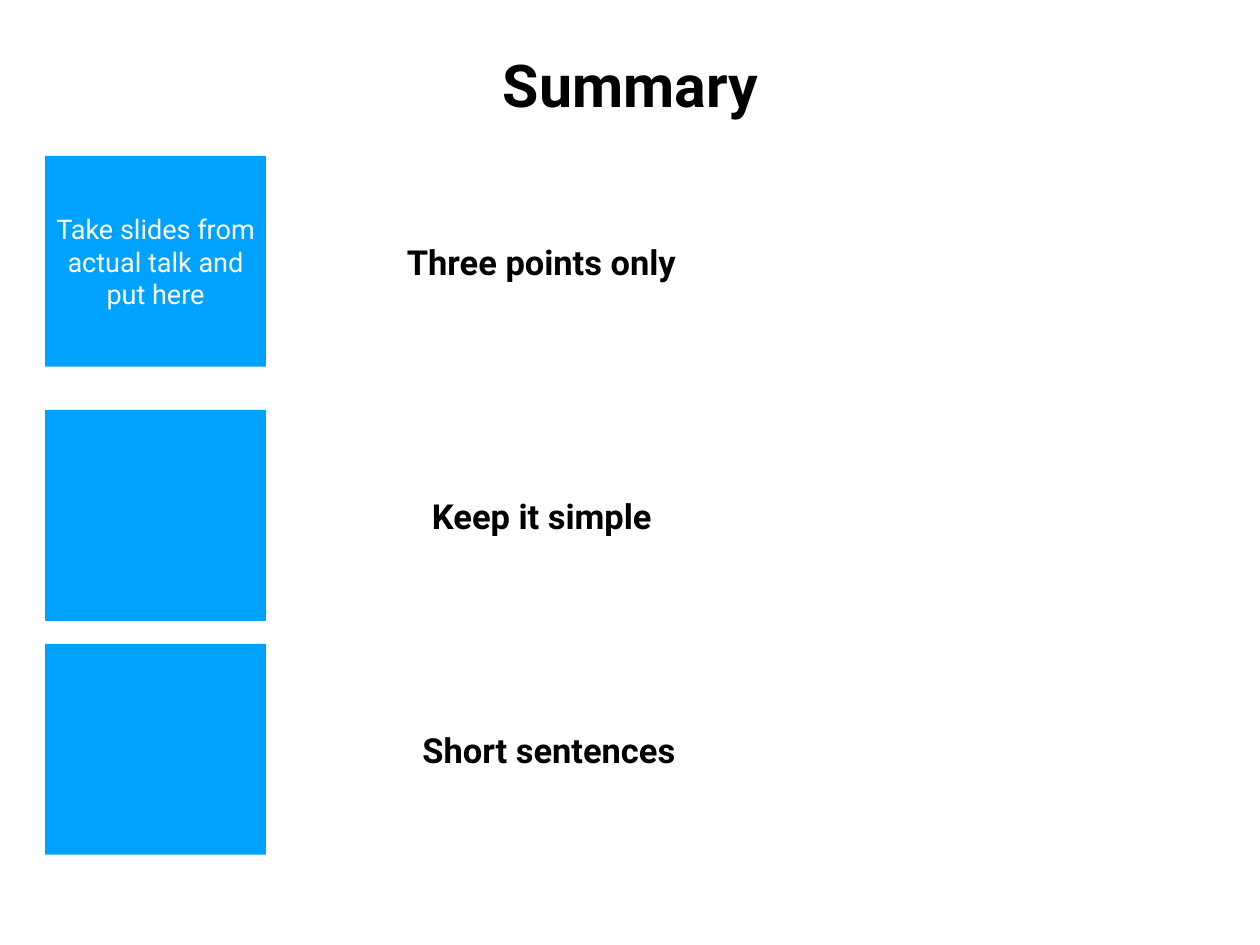
"""Build the Summary slide: a title and three blue tiles, each with a short label."""
from pptx import Presentation
from pptx import util as u
from pptx.dml.color import RGBColor
from pptx.enum import shapes, text

COLORS = {"tile": "00A2FF", "ink": "000000", "tile_text": "FFFFFF"}

presentation = Presentation()
presentation.slide_width = u.Inches(14.22)
presentation.slide_height = u.Inches(10.67)
column = presentation.slide_width / 100
row = presentation.slide_height / 100
slide = presentation.slides.add_slide(presentation.slide_layouts[5])


def place(left, top, width, height):
    return int(left * column), int(top * row), int(width * column), int(height * row)


def write(shape, content, size, color="ink", bold=True, wrap=False):
    frame = shape.text_frame
    frame.word_wrap = wrap
    frame.auto_size = text.MSO_AUTO_SIZE.NONE if wrap else text.MSO_AUTO_SIZE.SHAPE_TO_FIT_TEXT
    frame.vertical_anchor = text.MSO_ANCHOR.MIDDLE
    frame.margin_left = frame.margin_right = u.Inches(0.06)
    frame.margin_top = frame.margin_bottom = u.Inches(0.06)
    paragraph = frame.paragraphs[0]
    paragraph.alignment = text.PP_ALIGN.CENTER
    run = paragraph.add_run()
    run.text = content
    run.font.name = "Roboto"
    run.font.size = u.Pt(size)
    run.font.bold = bold
    run.font.color.rgb = RGBColor.from_string(COLORS[color])


title = slide.shapes.title
title.left, title.top, title.width, title.height = place(38.96, 4.69, 22.15, 8.43)
write(title, "Summary", 48)

TILE_LEFT, TILE_WIDTH, TILE_HEIGHT = 3.59, 17.51, 22.31
LABEL_HEIGHT = 5.34
points = [
    (16.49, "Take slides from actual talk and put here", "Three points only", 31.29, 23.35),
    (43.39, "", "Keep it simple", 33.26, 19.48),
    (68.13, "", "Short sentences", 32.49, 22.15),
]
for tile_top, tile_text, label_text, label_left, label_width in points:
    tile = slide.shapes.add_shape(
        shapes.MSO_SHAPE.RECTANGLE, *place(TILE_LEFT, tile_top, TILE_WIDTH, TILE_HEIGHT))
    tile.shadow.inherit = False
    tile.fill.solid()
    tile.fill.fore_color.rgb = RGBColor.from_string(COLORS["tile"])
    tile.line.fill.background()
    if tile_text:
        write(tile, tile_text, 22, color="tile_text", bold=False, wrap=True)

    label_top = tile_top + (TILE_HEIGHT - LABEL_HEIGHT) / 2
    label = slide.shapes.add_textbox(*place(label_left, label_top, label_width, LABEL_HEIGHT))
    write(label, label_text, 28)

presentation.save("out.pptx")
